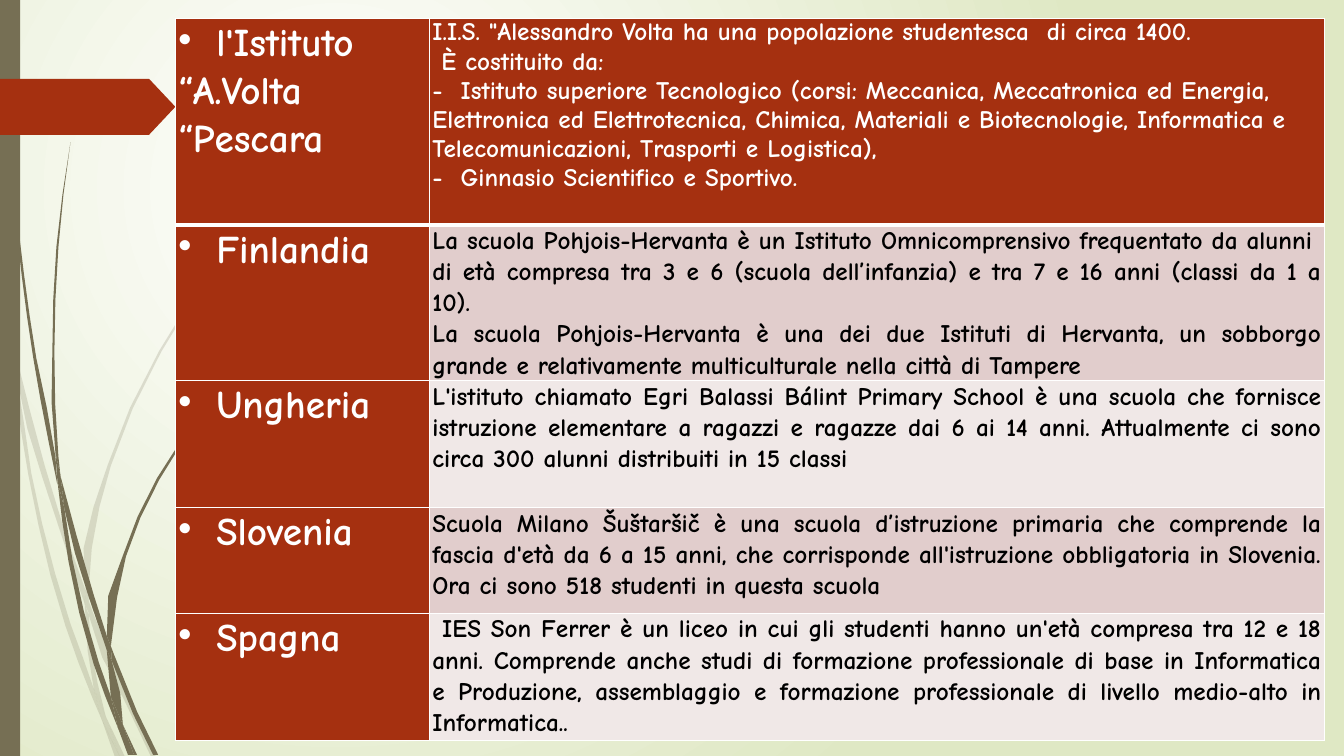
import itertools
from dataclasses import dataclass

import lxml.etree
import pptx
import pptx.dml.color
import pptx.enum.shapes
import pptx.enum.text
import pptx.oxml
import pptx.oxml.ns
import pptx.shapes.base
import pptx.slide
import pptx.table
import pptx.util

WHITE = pptx.dml.color.RGBColor(0xFF, 0xFF, 0xFF)
BLACK = pptx.dml.color.RGBColor(0x00, 0x00, 0x00)
RUST = pptx.dml.color.RGBColor(0xA5, 0x30, 0x10)
OLIVE = pptx.dml.color.RGBColor(0x76, 0x6F, 0x54)
PALE_GREEN = pptx.dml.color.RGBColor(0xDF, 0xE8, 0xC4)
ROSE = pptx.dml.color.RGBColor(0xE1, 0xCD, 0xCC)
LIGHT_ROSE = pptx.dml.color.RGBColor(0xF0, 0xE8, 0xE7)

FONT = "Comic Neue"
GRID = pptx.util.Pt(0.72)  # unit of the grass coordinates
PIECE = 60  # longest straight piece of a blade edge, in grid units
Edge = tuple[tuple[int, int], ...]


@dataclass
class Blade:
    """A grass sliver between two smooth edges, both running downwards."""
    left: Edge
    right: Edge


@dataclass
class School:
    place: list[str]
    description: list[str]
    height: float
    fill: pptx.dml.color.RGBColor
    ink: pptx.dml.color.RGBColor = BLACK
    justified: bool = True


PALE_BLADES = [
    Blade(((0, 282), (9, 322), (11, 350)), ((0, 299), (10, 344), (11, 350))),
    Blade(((14, 345), (17, 376), (58, 522), (84, 599)), ((14, 345), (62, 520), (85, 586))),
    Blade(((88, 596), (88, 610), (123, 694), (150, 751)),
          ((88, 596), (92, 607), (127, 692), (155, 751))),
    Blade(((105, 711), (119, 751)), ((105, 711), (124, 751))),
    Blade(((11, 350), (28, 470), (65, 621), (92, 693), (101, 714)),
          ((11, 350), (17, 376), (31, 469), (70, 619), (93, 683), (101, 714))),
    Blade(((84, 599), (87, 646), (93, 683), (105, 711)),
          ((84, 599), (88, 610), (91, 646), (105, 711))),
    Blade(((312, 153), (268, 197), (228, 244), (158, 348), (107, 461), (85, 586), (88, 596)),
          ((312, 153), (268, 198), (229, 245), (160, 349), (110, 462), (88, 584), (88, 596))),
    Blade(((101, 714), (114, 751)), ((101, 714), (119, 751))),
    Blade(((85, 586), (84, 599), (88, 608)), ((85, 586), (88, 596), (88, 610))),
    Blade(((93, 683), (101, 714), (119, 751)), ((93, 683), (105, 711), (119, 751))),
]
DARK_BLADES = [
    Blade(((3, 0), (7, 110), (17, 233), (33, 355), (57, 481)),
          ((4, 0), (8, 109), (19, 232), (36, 355), (55, 453), (57, 481))),
    Blade(((60, 472), (64, 505), (88, 592), (106, 645)), ((60, 472), (93, 590), (106, 631))),
    Blade(((110, 641), (111, 656), (132, 708), (152, 749)),
          ((110, 641), (113, 649), (136, 706), (157, 749))),
    Blade(((57, 477), (68, 557), (93, 659), (117, 722)),
          ((57, 477), (64, 505), (72, 556), (98, 657), (110, 691), (117, 722))),
    Blade(((70, 141), (62, 193), (56, 245), (52, 349), (55, 449), (60, 472)),
          ((70, 141), (63, 193), (58, 245), (54, 349), (58, 453), (60, 472))),
    Blade(((122, 719), (133, 749)), ((122, 719), (136, 749))),
    Blade(((55, 449), (57, 477), (64, 505)), ((55, 449), (60, 472), (64, 505))),
    Blade(((260, 344), (231, 373), (204, 405), (156, 474), (122, 551), (106, 631), (110, 641)),
          ((261, 344), (231, 374), (205, 406), (158, 476), (125, 552), (111, 633), (110, 641))),
    Blade(((117, 722), (127, 749)), ((117, 722), (131, 749))),
    Blade(((106, 645), (110, 691), (122, 719)), ((106, 645), (111, 656), (122, 719))),
    Blade(((106, 631), (106, 645), (111, 656)), ((106, 631), (110, 641), (111, 656))),
    Blade(((110, 691), (117, 722), (130, 749)), ((110, 691), (122, 719), (133, 749))),
]

SCHOOLS = [
    School(["l'Istituto", "“A.Volta “Pescara "], [
        "I.I.S. \"Alessandro Volta ha una popolazione studentesca  di circa 1400.",
        " È costituito da:",
        "-  Istituto superiore Tecnologico (corsi: Meccanica, Meccatronica ed Energia, Elettronica ed "
        "Elettrotecnica, Chimica, Materiali e Biotecnologie, Informatica e Telecomunicazioni, "
        "Trasporti e Logistica),",
        "-  Ginnasio Scientifico e Sportivo."], 147.6, RUST, WHITE, False),
    School(["Finlandia"], [
        "La scuola Pohjois-Hervanta è un Istituto Omnicomprensivo frequentato da alunni  di età compresa "
        "tra 3 e 6 (scuola dell’infanzia) e tra 7 e 16 anni (classi da 1 a 10).",
        "La scuola Pohjois-Hervanta è una dei due Istituti di Hervanta, un sobborgo grande e "
        "relativamente multiculturale nella città di Tampere"], 101.5, ROSE),
    School(["Ungheria "], [
        "L'istituto chiamato Egri Balassi Bálint Primary School è una scuola che fornisce istruzione "
        "elementare a ragazzi e ragazze dai 6 ai 14 anni. Attualmente ci sono circa 300 alunni "
        "distribuiti in 15 classi"], 90.7, LIGHT_ROSE),
    School(["Slovenia"], [
        "Scuola Milano Šuštaršič è una scuola d’istruzione primaria che comprende la fascia d'età da 6 a "
        "15 anni, che corrisponde all'istruzione obbligatoria in Slovenia. Ora ci sono 518 studenti in "
        "questa scuola"], 75.6, ROSE),
    School(["Spagna"], [
        " IES Son Ferrer è un liceo in cui gli studenti hanno un'età compresa tra 12 e 18 anni. Comprende "
        "anche studi di formazione professionale di base in Informatica e Produzione, assemblaggio e "
        "formazione professionale di livello medio-alto in Informatica.."], 90.7, LIGHT_ROSE),
]


def xml(text: str) -> lxml.etree.ElementBase:
    return pptx.oxml.parse_xml(text.replace(">", f" {pptx.oxml.ns.nsdecls('a')}>", 1))


def paint(shape: pptx.shapes.base.BaseShape, color: pptx.dml.color.RGBColor, opacity: int = 100) -> None:
    shape.shadow.inherit = False
    shape.line.fill.background()
    shape.fill.solid()
    shape.fill.fore_color.rgb = color
    if opacity < 100:
        tint = shape.element.spPr.find(".//" + pptx.oxml.ns.qn("a:srgbClr"))
        tint.append(xml(f'<a:alpha val="{opacity * 1000}"></a:alpha>'))


def smooth(edge: Edge) -> list[tuple[int, int]]:
    """Run a cubic curve x(y) through the points of an edge, in EMU."""
    spans = [b[1] - a[1] for a, b in itertools.pairwise(edge)]
    chords = [(b[0] - a[0]) / (b[1] - a[1]) for a, b in itertools.pairwise(edge)]
    inner = [(c0 * h1 + c1 * h0) / (h0 + h1)
             for (c0, c1), (h0, h1) in zip(itertools.pairwise(chords), itertools.pairwise(spans))]
    slopes = [chords[0], *inner, chords[-1]]
    if inner:
        slopes[0] = 1.5 * chords[0] - 0.5 * inner[0]
        slopes[-1] = 1.5 * chords[-1] - 0.5 * inner[-1]
    points = [edge[0]]
    for i, span in enumerate(spans):
        (x0, y0), chord = edge[i], chords[i]
        steps = 1 + span // PIECE
        for t in (step / steps for step in range(1, steps + 1)):
            bend = t * (1 - t) * ((slopes[i] - chord) * (1 - t) - (slopes[i + 1] - chord) * t)
            points.append((x0 + span * (chord * t + bend), y0 + span * t))
    return [(round(x * GRID), round(y * GRID)) for x, y in points]


def draw_blade(slide: pptx.slide.Slide, blade: Blade, opacity: int) -> None:
    outline = smooth(blade.left) + smooth(blade.right)[::-1]
    builder = slide.shapes.build_freeform(*outline[0], scale=1.0)
    builder.add_line_segments(outline[1:], close=True)
    paint(builder.convert_to_shape(), OLIVE, opacity)


def add_block(slide: pptx.slide.Slide, kind: pptx.enum.shapes.MSO_SHAPE, top: float, width: float,
              height: float, color: pptx.dml.color.RGBColor) -> pptx.shapes.base.BaseShape:
    block = slide.shapes.add_shape(kind, 0, *map(pptx.util.Pt, (top, width, height)))
    paint(block, color)
    return block


def write_cell(cell: pptx.table._Cell, lines: list[str], size: float, ink: pptx.dml.color.RGBColor,
               fill: pptx.dml.color.RGBColor, justified: bool, bulleted: bool) -> None:
    cell.margin_left = cell.margin_right = pptx.util.Pt(2.2)
    cell.margin_top = cell.margin_bottom = 0
    cell.fill.solid()
    cell.fill.fore_color.rgb = fill
    for i, line in enumerate(lines):
        paragraph = cell.text_frame.add_paragraph() if i else cell.text_frame.paragraphs[0]
        if justified:
            paragraph.alignment = pptx.enum.text.PP_ALIGN.JUSTIFY
            paragraph.line_spacing = 1.07
        if bulleted and i == 0:
            properties = paragraph._p.get_or_add_pPr()
            properties.set("marL", str(pptx.util.Pt(27)))
            properties.set("indent", str(-pptx.util.Pt(27)))
            properties.append(xml('<a:buChar char="•"></a:buChar>'))
        run = paragraph.add_run()
        run.text = line
        run.font.name, run.font.size, run.font.bold = FONT, pptx.util.Pt(size), True
        run.font.color.rgb = ink


def set_borders(cell: pptx.table._Cell, top: float, bottom: float) -> None:
    for i, (side, width) in enumerate({"L": 1, "R": 1, "T": top, "B": bottom}.items()):
        cell._tc.get_or_add_tcPr().insert(i, xml(
            f'<a:ln{side} w="{pptx.util.Pt(width)}"><a:solidFill><a:srgbClr val="{WHITE}"/>'
            f'</a:solidFill></a:ln{side}>'))


def add_schools(slide: pptx.slide.Slide) -> None:
    widths = [pptx.util.Pt(181.4), pptx.util.Pt(639.4)]
    table = slide.shapes.add_table(len(SCHOOLS), 2, pptx.util.Pt(125.3), pptx.util.Pt(13), sum(widths),
                                   pptx.util.Pt(sum(school.height for school in SCHOOLS))).table
    table.first_row = table.horz_banding = False
    for column, width in zip(table.columns, widths):
        column.width = width
    for i, (school, row) in enumerate(zip(SCHOOLS, table.rows)):
        row.height = pptx.util.Pt(school.height)
        place, description = row.cells
        write_cell(place, school.place, 28, WHITE, RUST, True, True)
        write_cell(description, school.description, 18, school.ink, school.fill, school.justified, False)
        for cell in (place, description):
            set_borders(cell, top=3 if i == 1 else 1, bottom=3 if i == 0 else 1)


def main() -> None:
    deck = pptx.Presentation()
    deck.slide_width, deck.slide_height = pptx.util.Pt(960), pptx.util.Pt(540)
    slide = deck.slides.add_slide(deck.slide_layouts[6])

    # Background glow
    slide.background.fill.solid()
    backdrop = slide.element.find(".//" + pptx.oxml.ns.qn("p:bgPr"))
    backdrop.replace(backdrop[0], xml(
        f'<a:gradFill><a:gsLst><a:gs pos="0"><a:srgbClr val="{WHITE}"/></a:gs><a:gs pos="100000">'
        f'<a:srgbClr val="{PALE_GREEN}"/></a:gs></a:gsLst><a:path path="circle">'
        '<a:fillToRect l="50000" t="50000" r="100000" b="100000"/></a:path></a:gradFill>'))

    # Grass, side bar and arrow tag
    for blades, opacity in ((PALE_BLADES, 20), (DARK_BLADES, 100)):
        for blade in blades:
            draw_blade(slide, blade, opacity)
    add_block(slide, pptx.enum.shapes.MSO_SHAPE.RECTANGLE, 0, 14.4, 540, OLIVE)
    tag = add_block(slide, pptx.enum.shapes.MSO_SHAPE.PENTAGON, 56.3, 125.3, 40, RUST)
    tag.adjustments[0] = 0.47

    # Table of schools
    add_schools(slide)
    deck.save("out.pptx")


if __name__ == "__main__":
    main()
